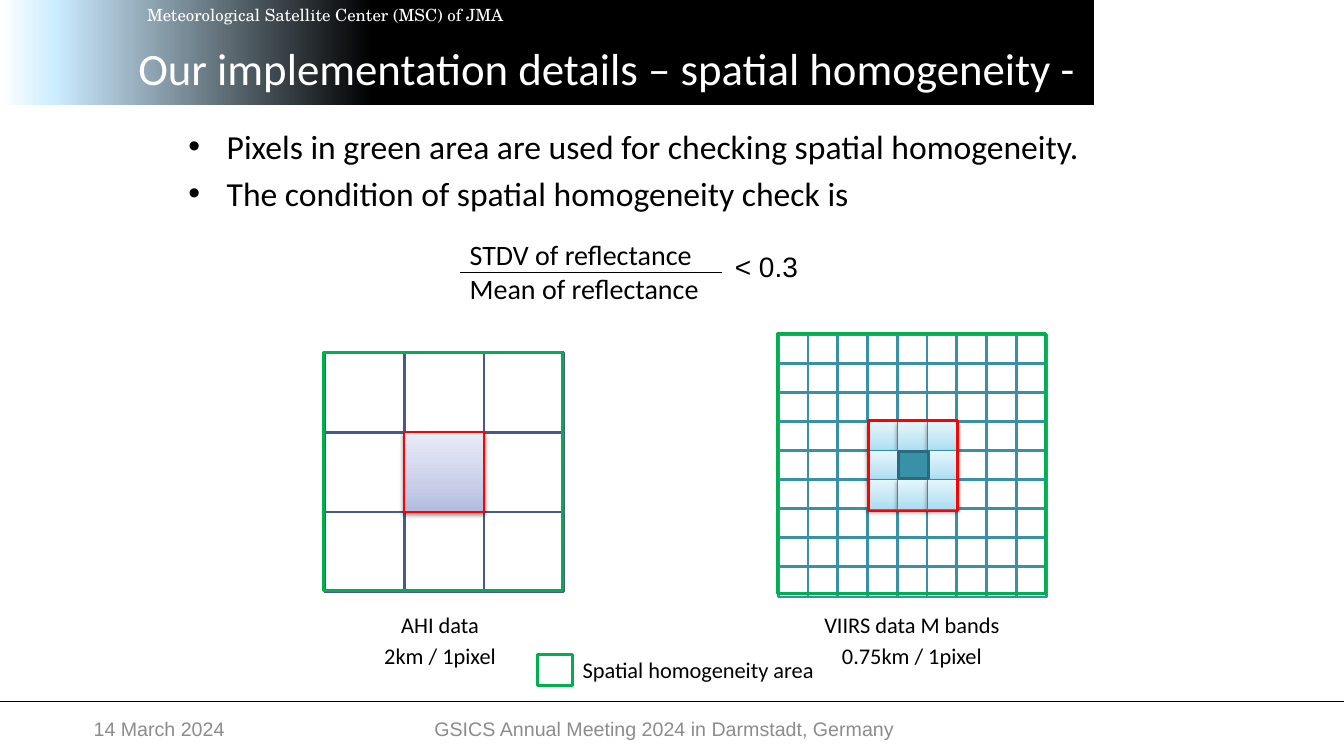
"""Build the slide on the spatial homogeneity check for two pixel grids."""
from itertools import product

from lxml.etree import SubElement
from pptx import Presentation
from pptx.dml.color import RGBColor
from pptx.enum.shapes import MSO_CONNECTOR, MSO_SHAPE
from pptx.enum.text import MSO_ANCHOR, MSO_AUTO_SIZE, PP_ALIGN
from pptx.oxml.ns import qn
from pptx.util import Inches, Pt


class Theme:
    """Colours, fonts and type sizes."""
    black, white, grey = "000000", "FFFFFF", "8C8C8C"
    red, green = "FF0000", "00B050"
    navy, teal, deep, edge = "475A8D", "3891A7", "296B7C", "348FA6"
    band = [(66, "000000"), (95, "CCECFF"), (100, "FFFFFF")]
    lilac = [(0, "B2BBE0"), (35, "C9CFE8"), (100, "EAECF7")]
    sky = [(0, "A5DDF3"), (35, "C1E6F5"), (100, "E6F6FC")]
    body, sans, serif = "Calibri", "Arial", "TeX Gyre Schola"
    head, point, ratio, label, foot, tag = 32, 24, 20, 16, 14, 12


def box(area, fill=None, line=None, width=2, angle=90, glow=False):
    """Add a rectangle; a list as fill is a gradient, glow adds a shadow."""
    rect = slide.shapes.add_shape(MSO_SHAPE.RECTANGLE, *map(Inches, area))
    rect.shadow.inherit = False
    if isinstance(fill, list):
        rect.fill.gradient()
        rect.fill.gradient_angle = angle
        stops = rect.element.spPr.find(qn("a:gradFill")).find(qn("a:gsLst"))
        stops.clear()
        for place, tone in fill:
            stop = SubElement(stops, qn("a:gs"), pos=str(place * 1000))
            SubElement(stop, qn("a:srgbClr"), val=tone)
    elif fill:
        rect.fill.solid()
        rect.fill.fore_color.rgb = RGBColor.from_string(fill)
    else:
        rect.fill.background()
    if line:
        rect.line.color.rgb = RGBColor.from_string(line)
        rect.line.width = Pt(width)
    else:
        rect.line.fill.background()
    if glow:
        effects = rect.element.spPr.find(qn("a:effectLst"))
        shade = SubElement(effects, qn("a:outerShdw"), blurRad=str(Pt(3.1)),
                           dist=str(Pt(1.6)), dir="5400000", rotWithShape="0")
        tone = SubElement(shade, qn("a:srgbClr"), val=Theme.black)
        SubElement(tone, qn("a:alpha"), val="38000")
    return rect


def write(area, lines, size, font=Theme.body, tone=Theme.black, align=PP_ALIGN.LEFT,
          anchor=MSO_ANCHOR.TOP, gap=0, bullet=False, shape=None):
    """Put lines of text in a new text box or in the given shape."""
    left, top, width, height = map(Inches, area)
    shape = shape or slide.shapes.add_textbox(left, top, width, height)
    shape.left, shape.top, shape.width, shape.height = left, top, width, height
    frame = shape.text_frame
    frame.word_wrap = True
    frame.auto_size = MSO_AUTO_SIZE.NONE
    frame.vertical_anchor = anchor
    for index, line in enumerate(lines):
        para = frame.add_paragraph() if index else frame.paragraphs[0]
        para.alignment = align
        para.space_before = Pt(gap if index else 0)
        if bullet:
            props = para._p.get_or_add_pPr()
            props.set("marL", str(Inches(0.38)))
            props.set("indent", str(Inches(-0.38)))
            SubElement(props, qn("a:buFont"), typeface=Theme.sans)
            SubElement(props, qn("a:buChar"), char="•")
        run = para.add_run()
        run.text = line
        run.font.size = Pt(size)
        run.font.name = font
        run.font.color.rgb = RGBColor.from_string(tone)


deck = Presentation()
deck.slide_width, deck.slide_height = Inches(13.33), Inches(7.5)
slide = deck.slides.add_slide(deck.slide_layouts[5])
title = slide.shapes.title

band = box((0, 0, 10.85, 1.04), Theme.band, angle=180)
title.element.addprevious(band.element)
write((1.36, 0, 6.25, 0.3), ["Meteorological Satellite Center (MSC) of JMA"],
      Theme.tag, Theme.serif, Theme.white)
write((0.02, 0.27, 12, 0.8), ["Our implementation details – spatial homogeneity -"],
      Theme.head, tone=Theme.white, align=PP_ALIGN.CENTER,
      anchor=MSO_ANCHOR.MIDDLE, shape=title)

write((1.77, 1.2, 10.03, 1.12),
      ["Pixels in green area are used for checking spatial homogeneity.",
       "The condition of spatial homogeneity check is"],
      Theme.point, gap=4.8, bullet=True)
write((4.56, 2.31, 2.6, 0.77), ["STDV of reflectance", "Mean of reflectance"],
      Theme.ratio)
write((7.19, 2.43, 1.66, 0.44), ["< 0.3"], Theme.ratio, Theme.sans)

for start, end, height, width in [(4.56, 7.16, 2.7, 0.75), (0, 13.33, 6.96, 1)]:
    rule = slide.shapes.add_connector(MSO_CONNECTOR.STRAIGHT, Inches(start),
                                      Inches(height), Inches(end), Inches(height))
    rule.line.color.rgb = RGBColor.from_string(Theme.black)
    rule.line.width = Pt(width)
    SubElement(rule.element.spPr, qn("a:effectLst"))

side = 0.79
for row, col in product(range(3), repeat=2):
    if (row, col) != (1, 1):
        box((3.22 + col * side, 3.5 + row * side, side, side),
            Theme.white, Theme.navy)
box((3.22 + side, 3.5 + side, side, side), Theme.lilac, Theme.red, 1.5, glow=True)

cells = [(row, col, 7.72 + col * 0.295, 3.32 + row * 0.288)
         for row, col in product(range(9), repeat=2)]
core = range(3, 6)
for row, col, left, top in cells:
    if row not in core or col not in core:
        box((left, top, 0.3, 0.3), Theme.white, Theme.teal)
for row, col, left, top in cells:
    if row in core and col in core and (row, col) != (4, 4):
        box((left, top, 0.3, 0.3), Theme.sky, Theme.edge, 0.75, glow=True)
box((8.91, 4.48, 0.3, 0.27), Theme.teal, Theme.deep)
box((8.61, 4.17, 0.89, 0.9), line=Theme.red)

for area in [(3.21, 3.5, 2.37, 2.36), (7.71, 3.31, 2.66, 2.58),
             (5.33, 6.49, 0.35, 0.31)]:
    box(area, line=Theme.green, width=2.25)

write((3.18, 6.01, 2.37, 0.71), ["AHI data", "2km / 1pixel"],
      Theme.label, align=PP_ALIGN.CENTER, gap=3.2)
write((7.66, 6.01, 2.77, 0.7), ["VIIRS data M bands", "0.75km / 1pixel"],
      Theme.label, align=PP_ALIGN.CENTER, gap=3.2)
write((5.68, 6.46, 2.6, 0.45), ["Spatial homogeneity area"], Theme.label)

write((0.83, 7.03, 3.11, 0.4), ["14 March 2024"], Theme.foot, Theme.sans,
      Theme.grey, anchor=MSO_ANCHOR.MIDDLE)
write((4.02, 7.03, 5.14, 0.4), ["GSICS Annual Meeting 2024 in Darmstadt, Germany"],
      Theme.foot, Theme.sans, Theme.grey, PP_ALIGN.CENTER, MSO_ANCHOR.MIDDLE)

deck.save("out.pptx")
